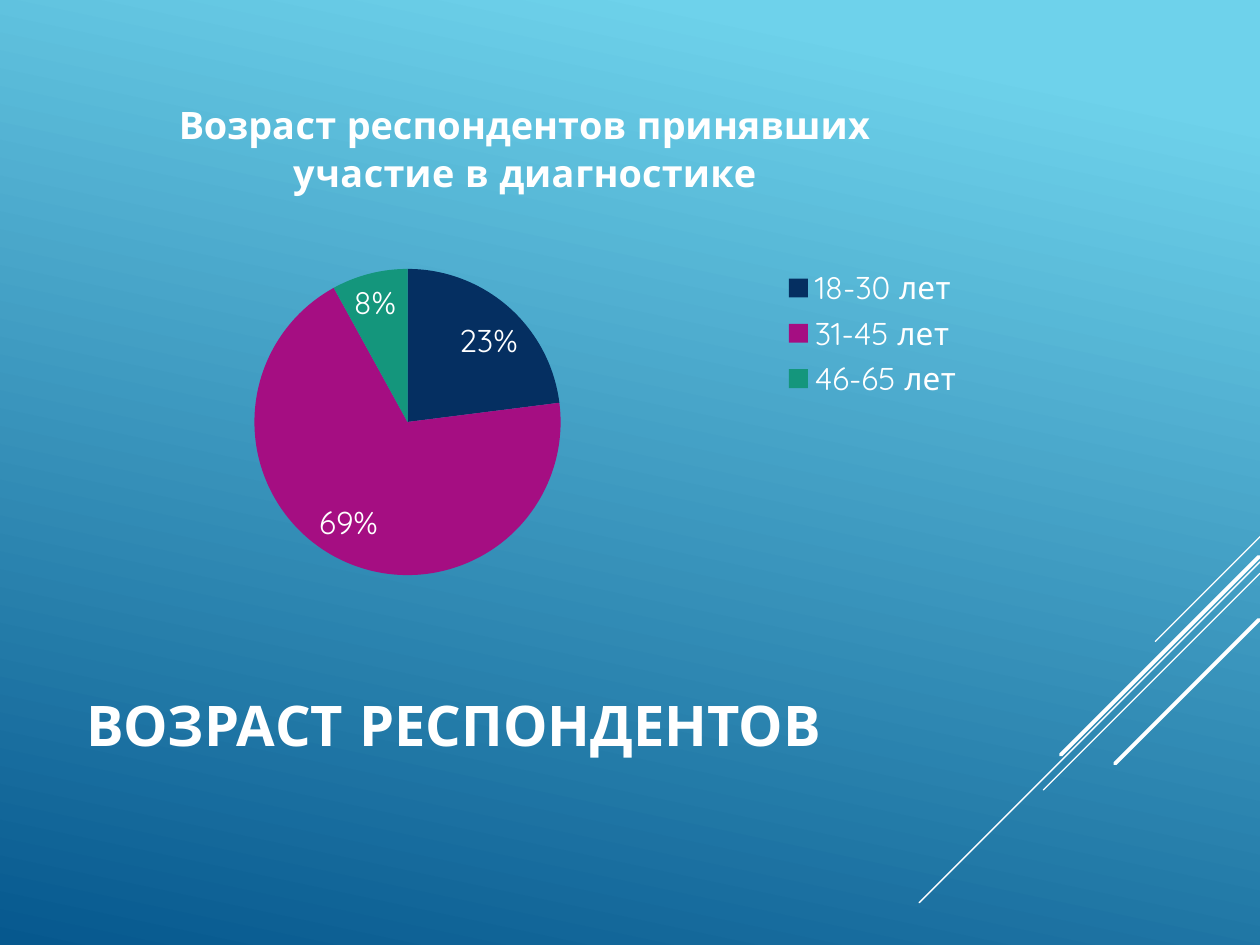
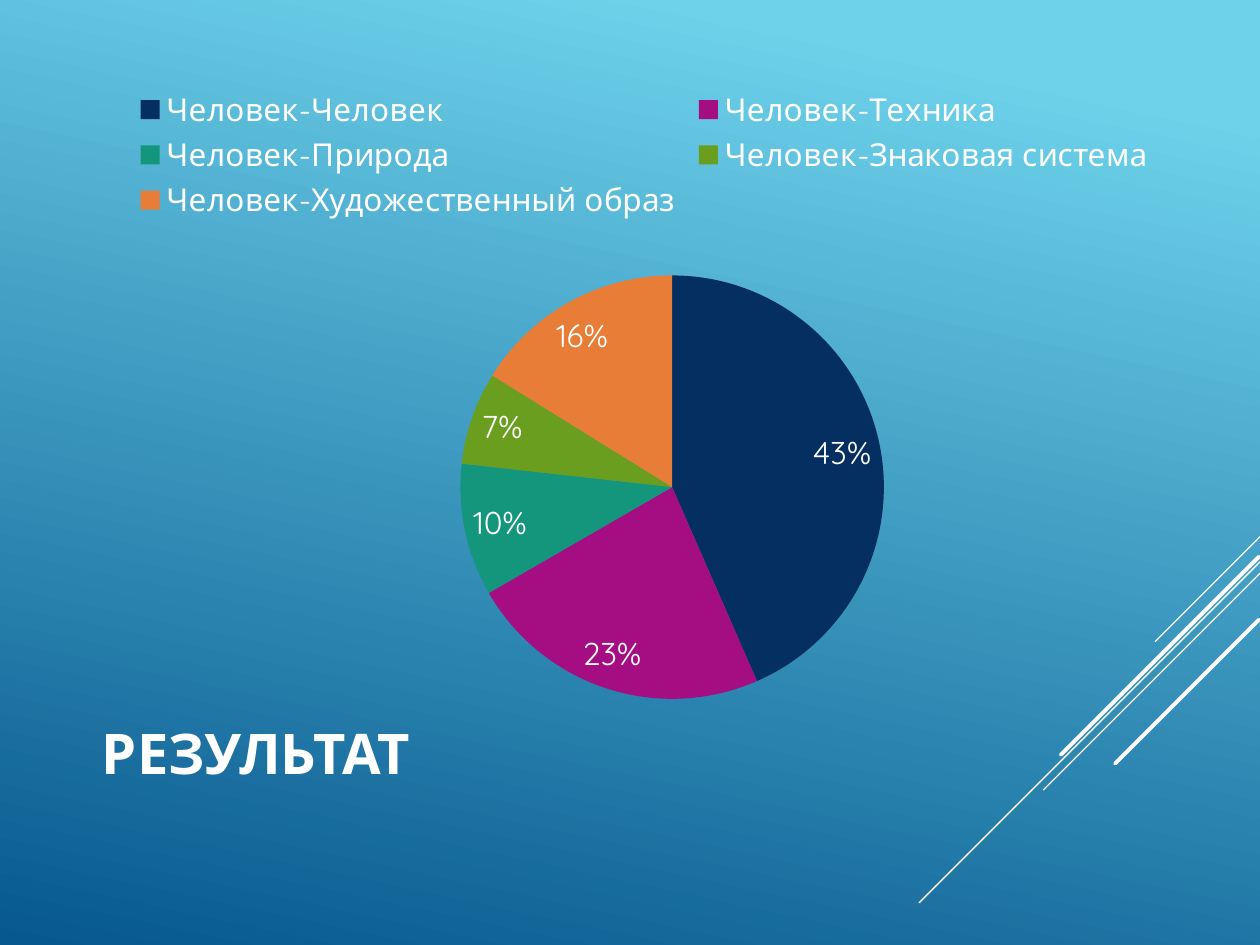
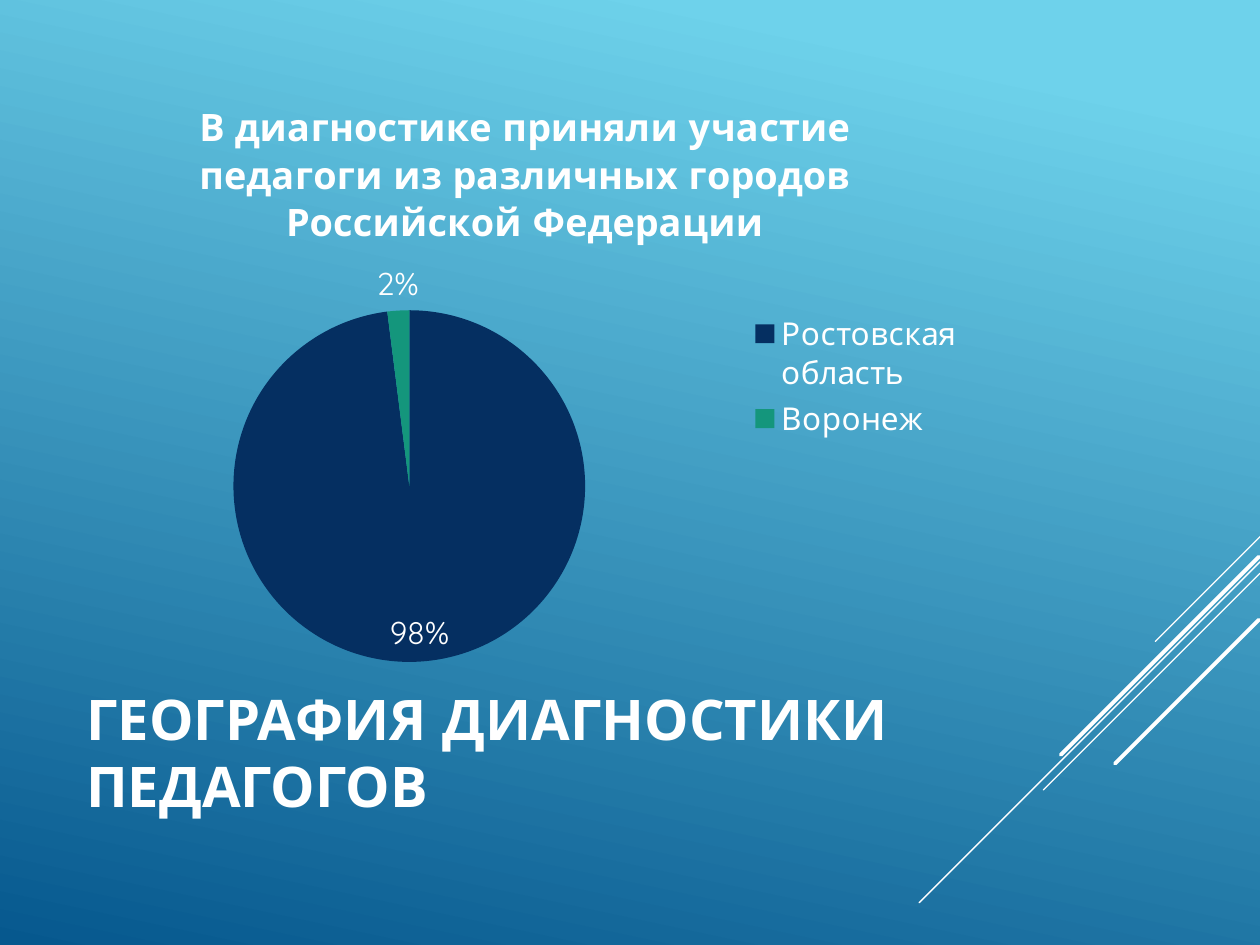
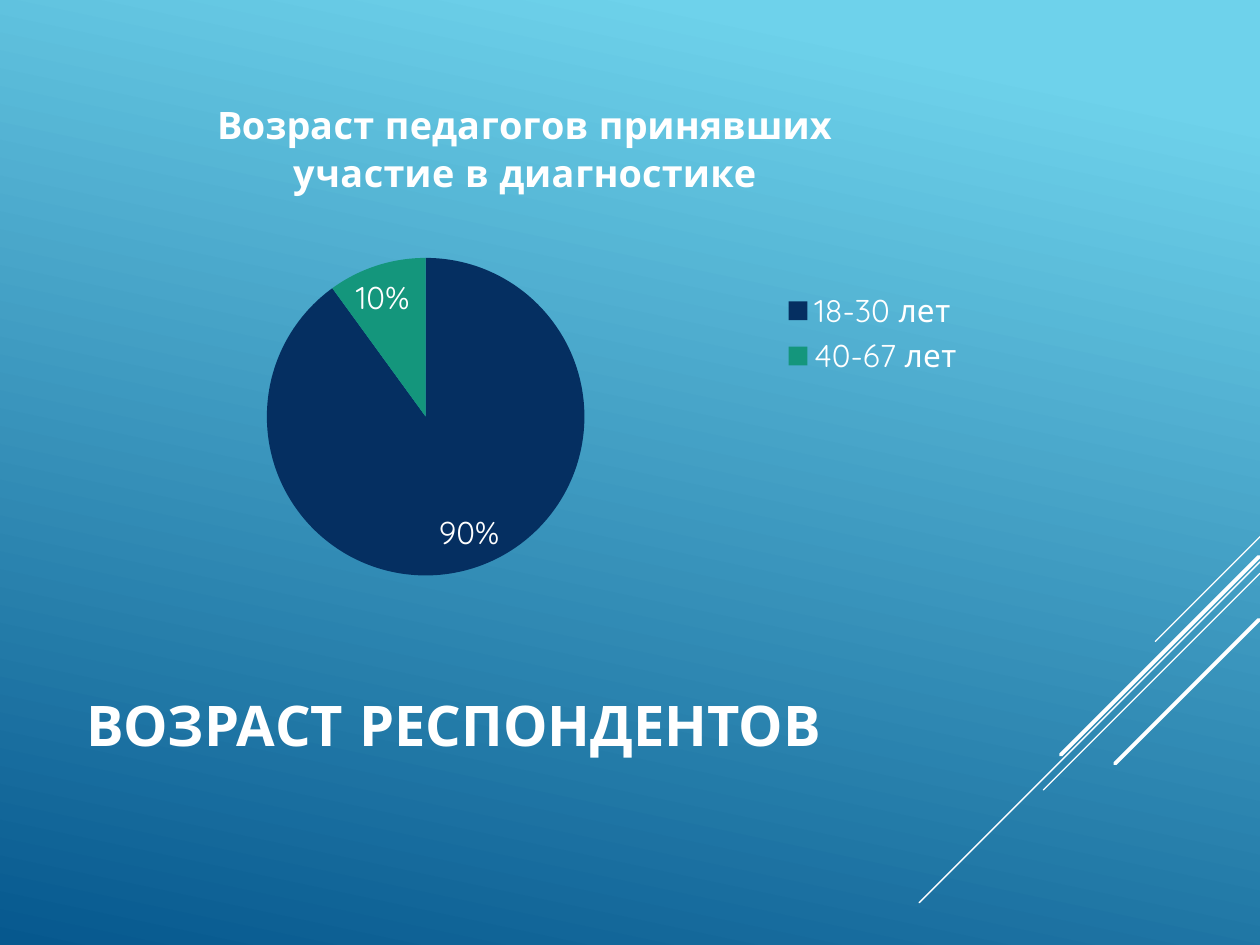
from lxml import etree
from pptx import Presentation
from pptx.chart.data import CategoryChartData
from pptx.dml.color import RGBColor
from pptx.enum.chart import XL_CHART_TYPE, XL_LABEL_POSITION, XL_LEGEND_POSITION
from pptx.enum.shapes import MSO_CONNECTOR
from pptx.enum.text import MSO_ANCHOR, MSO_AUTO_SIZE, PP_ALIGN
from pptx.oxml.ns import qn
from pptx.util import Pt

PIE = XL_CHART_TYPE.PIE
FIT = XL_LABEL_POSITION.BEST_FIT
RIGHT, TOP = XL_LEGEND_POSITION.RIGHT, XL_LEGEND_POSITION.TOP
LEFT, CENTER = PP_ALIGN.LEFT, PP_ALIGN.CENTER
MIDDLE = MSO_ANCHOR.MIDDLE
LINE = MSO_CONNECTOR.STRAIGHT

FONT = "Quicksand"
COLORS = {
    "white": "FFFFFF", "sky": "6ED2EB", "deep": "06588E",
    "navy": "052F61", "plum": "A50E82", "teal": "14967C",
    "green": "6A9E1F", "orange": "E87D37",
}

STRIPES = [
    (720, 306.7, 59.8, 0.75),
    (720, 321.1, 194.8, 0.75),
    (720, 327.6, 123.8, 0.75),
    (719.3, 318.2, 113.1, 2.25),
    (719.3, 354.2, 82.1, 2.25),
]

SLIDES = [
    {
        "title": "ВОЗРАСТ РЕСПОНДЕНТОВ", "box": (42, 354, 516, 120),
        "head": "Возраст респондентов принявших участие в диагностике",
        "chart": (42, 42, 516, 296.6), "pie": (145.4, 153.7, 175),
        "side": RIGHT, "legend": (445, 150, 107, 81),
        "parts": [("18-30 лет", 23, "navy"), ("31-45 лет", 69, "plum"),
                  ("46-65 лет", 8, "teal")],
    },
    {
        "title": " РЕЗУЛЬТАТ", "box": (42, 385.2, 510, 88.6),
        "head": None,
        "chart": (42, 42, 651, 367.2), "pie": (263.1, 157.4, 242),
        "side": TOP, "legend": (73, 48, 590, 81),
        "parts": [("Человек-Человек", 43, "navy"),
                  ("Человек-Техника", 23, "plum"),
                  ("Человек-Природа", 10, "teal"),
                  ("Человек-Знаковая система", 7, "green"),
                  ("Человек-Художественный образ", 16, "orange")],
    },
    {
        "title": "ГЕОГРАФИЯ ДИАГНОСТИКИ ПЕДАГОГОВ", "box": (42, 354, 516, 151.2),
        "head": "В диагностике приняли участие педагоги из различных городов "
                "Российской Федерации",
        "chart": (42, 42, 516, 346.3), "pie": (133.4, 177.3, 201),
        "side": RIGHT, "legend": (426, 176, 126, 78),
        "parts": [("Ростовская область", 98, "navy"), ("", None, "plum"),
                  ("Воронеж", 2, "teal")],
    },
    {
        "title": "ВОЗРАСТ РЕСПОНДЕНТОВ", "box": (42, 354, 516, 120),
        "head": "Возраст педагогов принявших участие в диагностике",
        "chart": (42, 42, 516, 296.6), "pie": (152.5, 147.4, 181.5),
        "side": RIGHT, "legend": (445, 163, 107, 55),
        "parts": [("18-30 лет", 90, "navy"), ("", None, "plum"),
                  ("40-67 лет", 10, "teal")],
    },
]


def paint(name):
    return RGBColor.from_string(COLORS[name])


def style(font, size, bold=False, color="white"):
    font.name, font.size, font.bold = FONT, Pt(size), bold
    font.color.rgb = paint(color)


def write(frame, text, size=18, bold=True, align=LEFT):
    para = frame.paragraphs[0]
    para.alignment = align
    run = para.add_run()
    run.text = text
    style(run.font, size, bold)


def place(owner, index, box, frame, inner=False):
    for old in owner.findall(qn("c:layout")):
        owner.remove(old)
    layout = etree.Element(qn("c:layout"))
    manual = etree.SubElement(layout, qn("c:manualLayout"))
    x, y, w, h = box
    left, top, width, height = frame
    rules = [("layoutTarget", "inner")] if inner else []
    rules += [("xMode", "edge"), ("yMode", "edge"),
              ("x", (x - left) / width), ("y", (y - top) / height),
              ("w", w / width), ("h", h / height)]
    for tag, val in rules:
        etree.SubElement(manual, qn("c:" + tag)).set("val", str(val))
    owner.insert(index, layout)


def hide_key(key, index):
    entry = etree.Element(qn("c:legendEntry"))
    etree.SubElement(entry, qn("c:idx")).set("val", str(index))
    etree.SubElement(entry, qn("c:delete")).set("val", "1")
    key.insert(1, entry)


def add_pie(slide, item):
    data = CategoryChartData()
    names, vals, hues = zip(*item["parts"])
    data.categories = names
    data.add_series(item["head"] or "Series 1", vals)
    box = item["chart"]
    chart = slide.shapes.add_chart(PIE, *map(Pt, box), data).chart
    style(chart.font, 18)
    chart.has_title = bool(item["head"])
    if item["head"]:
        write(chart.chart_title.text_frame, item["head"], size=21.6, align=CENTER)
        chart.chart_title.include_in_layout = False
    chart.has_legend = True
    chart.legend.position = item["side"]
    chart.legend.include_in_layout = False
    style(chart.legend.font, 18)

    plot = chart.plots[0]
    plot.vary_by_categories = True
    plot.has_data_labels = True
    labels = plot.data_labels
    labels.show_value, labels.show_percentage = False, True
    labels.number_format, labels.number_format_is_linked = "0%", False
    labels.position = FIT
    style(labels.font, 18)
    for i, hue in enumerate(hues):
        form = plot.series[0].points[i].format
        form.fill.solid()
        form.fill.fore_color.rgb = paint(hue)
        form.line.fill.background()

    x, y, size = item["pie"]
    area = chart.element.xpath(".//c:plotArea")[0]
    place(area, 0, (x, y, size, size), box, inner=True)
    key = chart.element.xpath(".//c:legend")[0]
    place(key, 1, item["legend"], box)
    for i, val in enumerate(vals):
        if val is None:
            hide_key(key, i)


def add_title(slide, item):
    title = slide.shapes.title
    title.left, title.top, title.width, title.height = map(Pt, item["box"])
    frame = title.text_frame
    frame.word_wrap, frame.auto_size = True, MSO_AUTO_SIZE.NONE
    frame.vertical_anchor = MIDDLE
    write(frame, item["title"], size=32)


def set_base(master, slide):
    fill = master.background.fill
    fill.gradient()
    fill.gradient_angle = 258
    for stop, hue, pos in zip(fill.gradient_stops, ("sky", "deep"), (0.1, 1)):
        stop.color.rgb = paint(hue)
        stop.position = pos
    tree = master.element.cSld.spTree
    for i, (x, y, run, width) in enumerate(STRIPES):
        ends = map(Pt, (x, y, x - run, y + run))
        line = slide.shapes.add_connector(LINE, *ends)
        line.line.color.rgb = paint("white")
        line.line.width = Pt(width)
        node = line.element
        node.xpath(".//a:ln")[0].set("cap", "rnd")
        etree.SubElement(node.spPr, qn("a:effectLst"))
        node.xpath(".//p:cNvPr")[0].set("id", str(20 + i))
        tree.insert(2 + i, node)


def main():
    deck = Presentation()
    deck.slide_width, deck.slide_height = Pt(720), Pt(540)
    for i, item in enumerate(SLIDES):
        slide = deck.slides.add_slide(deck.slide_layouts[5])
        if i == 0:
            set_base(deck.slide_master, slide)
        add_title(slide, item)
        add_pie(slide, item)
    deck.save("out.pptx")


if __name__ == "__main__":
    main()
